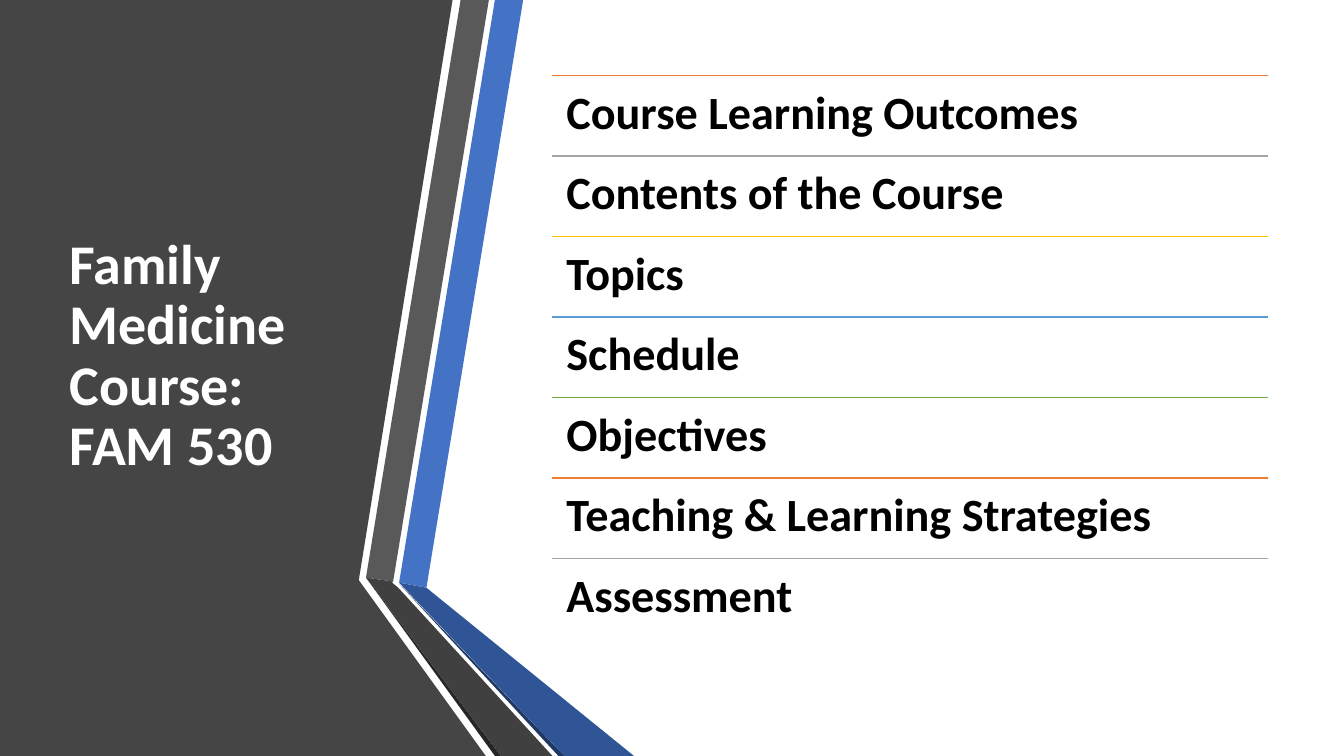
from lxml.etree import SubElement
from pptx import Presentation
from pptx.dml.color import RGBColor
from pptx.enum.shapes import MSO_CONNECTOR
from pptx.enum.text import MSO_ANCHOR, MSO_AUTO_SIZE, PP_ALIGN
from pptx.oxml.ns import qn
from pptx.util import Pt

WHITE = RGBColor(0xFF, 0xFF, 0xFF)
BLACK = RGBColor(0x00, 0x00, 0x00)
PANEL_GREY = RGBColor(0x45, 0x45, 0x45)
MID_GREY = RGBColor(0x59, 0x59, 0x59)
DARK_GREY = RGBColor(0x40, 0x40, 0x40)
EDGE_GREY = RGBColor(0x26, 0x26, 0x26)
BLUE = RGBColor(0x44, 0x72, 0xC4)
DARK_BLUE = RGBColor(0x2F, 0x55, 0x97)
NAVY = RGBColor(0x20, 0x38, 0x64)
ORANGE = RGBColor(0xED, 0x7D, 0x31)
SILVER = RGBColor(0xA5, 0xA5, 0xA5)
GOLD = RGBColor(0xFF, 0xC0, 0x00)
SKY = RGBColor(0x5B, 0x9B, 0xD5)
GREEN = RGBColor(0x70, 0xAD, 0x47)

FONT = "Calibri"
WIDTH, HEIGHT = 960, 540

deck = Presentation()
deck.slide_width, deck.slide_height = Pt(WIDTH), Pt(HEIGHT)
page = deck.slides.add_slide(deck.slide_layouts[5])


def style_paragraph(para, size, color):
    para.alignment = PP_ALIGN.LEFT
    para.line_spacing = 0.9
    para.font.name = FONT
    para.font.size = Pt(size)
    para.font.bold = True
    para.font.color.rgb = color


# Left panel and the folded ribbons, from back to front
ribbons = [
    (PANEL_GREY, [(0, 0), (323.3, 0), (256.3, 414.4), (347, HEIGHT), (0, HEIGHT)]),
    (BLUE, [(285.1, 416.2), (304.6, 419.8), (373.7, 0), (353.5, 0)]),
    (MID_GREY, [(349.2, 0), (329, 0), (261.4, 412.6), (280.8, 415.4)]),
    (EDGE_GREY, [(261.4, 412.6), (353.5, HEIGHT), (357.8, HEIGHT)]),
    (NAVY, [(285.1, 416.9), (398.9, HEIGHT), (403.2, HEIGHT)]),
    (DARK_BLUE, [(285.1, 416.2), (403.2, HEIGHT), (452.9, HEIGHT), (304.6, 419.8)]),
    (DARK_GREY, [(394.6, HEIGHT), (284.4, 419.8), (280.1, 416.2), (280.8, 415.4),
                 (261.4, 412.6), (357.8, HEIGHT)]),
]
for color, corners in ribbons:
    points = [(Pt(x), Pt(y)) for x, y in corners]
    builder = page.shapes.build_freeform(*points[0])
    builder.add_line_segments(points[1:], close=True)
    ribbon = builder.convert_to_shape()
    ribbon.shadow.inherit = False
    ribbon.fill.solid()
    ribbon.fill.fore_color.rgb = color
    ribbon.line.fill.background()

# Title, brought in front of the panel
title = page.shapes.title
title.element.getparent().append(title.element)
title.left, title.top, title.width, title.height = Pt(42.5), Pt(54), Pt(219), Pt(402)
title.text_frame.text = "Family Medicine Course: FAM 530"
title.text_frame.word_wrap = True
title.text_frame.auto_size = MSO_AUTO_SIZE.NONE
title.text_frame.vertical_anchor = MSO_ANCHOR.MIDDLE
style_paragraph(title.text_frame.paragraphs[0], 40, WHITE)

# Agenda: a coloured rule above each topic
agenda = [
    ("Course Learning Outcomes", ORANGE),
    ("Contents of the Course", SILVER),
    ("Topics", GOLD),
    ("Schedule", SKY),
    ("Objectives", GREEN),
    ("Teaching & Learning Strategies", ORANGE),
    ("Assessment", SILVER),
]
LEFT, TOP, ROW_WIDTH, ROW_HEIGHT = 394.6, 54, 511.2, 57.5
for index, (topic, color) in enumerate(agenda):
    top = Pt(TOP + index * ROW_HEIGHT)
    rule = page.shapes.add_connector(
        MSO_CONNECTOR.STRAIGHT, Pt(LEFT), top, Pt(LEFT + ROW_WIDTH), top)
    rule.line.color.rgb = color
    rule.line.width = Pt(1)
    SubElement(rule.element.spPr, qn("a:effectLst"))

    box = page.shapes.add_textbox(Pt(LEFT), top, Pt(ROW_WIDTH), Pt(ROW_HEIGHT))
    frame = box.text_frame
    frame.word_wrap = True
    frame.margin_left = frame.margin_right = Pt(10)
    frame.margin_top = frame.margin_bottom = Pt(10)
    frame.text = topic
    style_paragraph(frame.paragraphs[0], 33, BLACK)

deck.save("out.pptx")
